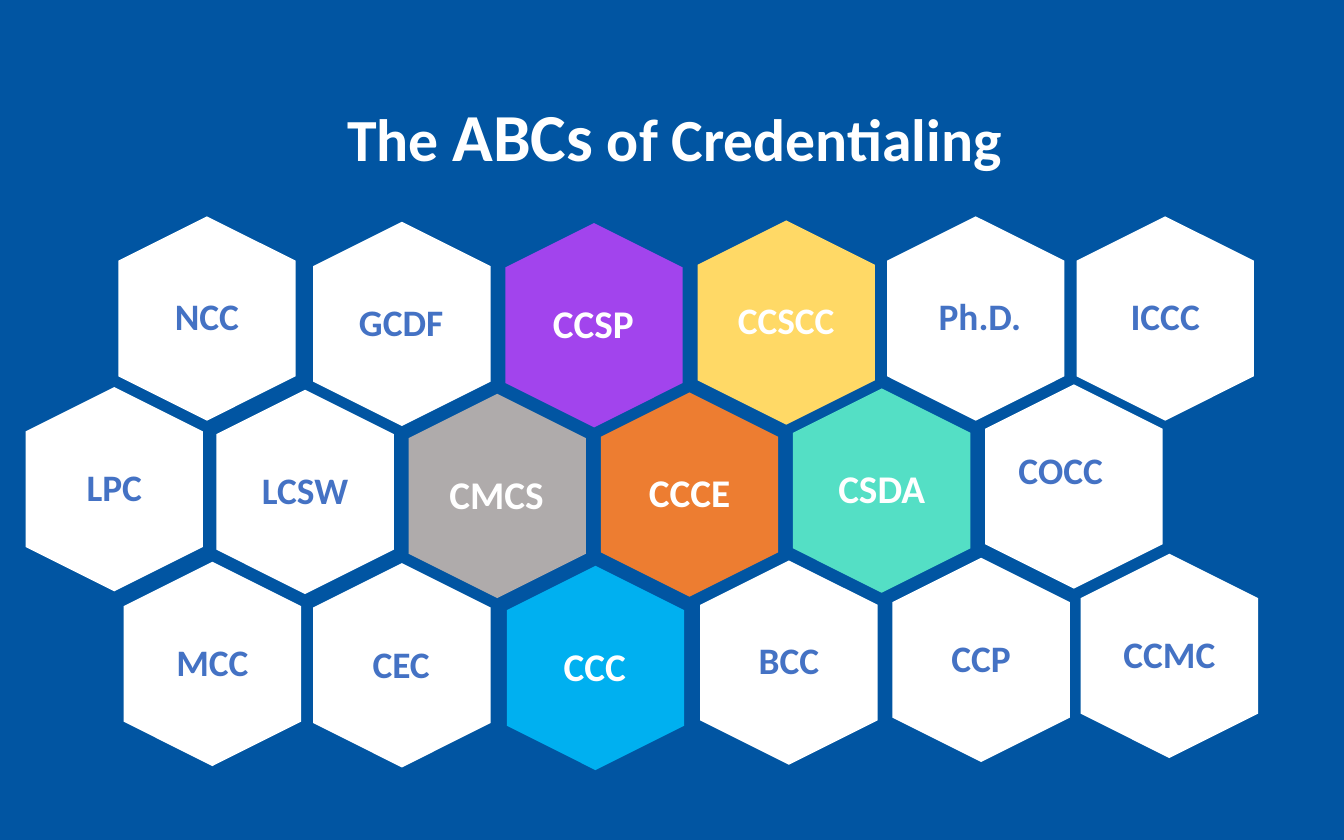
"""Build a slide with a honeycomb of counselling credentials."""
from pptx import Presentation
from pptx.dml.color import RGBColor
from pptx.enum.shapes import MSO_SHAPE
from pptx.enum.text import MSO_ANCHOR, MSO_AUTO_SIZE, PP_ALIGN
from pptx.util import Inches, Pt

HEXAGON = MSO_SHAPE.HEXAGON
TOP, MIDDLE = MSO_ANCHOR.TOP, MSO_ANCHOR.MIDDLE
LEFT, CENTER = PP_ALIGN.LEFT, PP_ALIGN.CENTER
FIXED = MSO_AUTO_SIZE.NONE

COLORS = {
    "navy": "0155A2", "white": "FFFFFF", "blue": "4472C4",
    "purple": "A244ED", "gray": "AFABAB", "sky": "00B0F0",
    "orange": "ED7D31", "teal": "54DFC5", "yellow": "FFD966",
}
WIDE, TALL, CUT = 1.32, 1.52, 0.33
SIDES = ("left", "top", "right", "bottom")

TILES = [
    ("CCSP", 3.76, 1.66, "purple", 21),
    ("GCDF", 2.33, 1.65, "white", 20),
    ("CMCS", 3.04, 2.93, "gray", 21),
    ("CCC", 3.77, 4.21, "sky", 21),
    ("CEC", 2.33, 4.19, "white", 20),
]
CELLS = [
    ("CCCE", 4.47, 2.92, "orange", 21),
    ("", 7.33, 2.86, "white", 20),
    ("CSDA", 5.9, 2.89, "teal", 21),
    ("BCC", 5.21, 4.17, "white", 20),
    ("CCSCC", 5.19, 1.64, "yellow", 20),
    ("ICCC", 8.01, 1.61, "white", 20),
    (" Ph.D.", 6.6, 1.61, "white", 20),
    ("MCC", 0.92, 4.18, "white", 20),
    ("NCC", 0.88, 1.61, "white", 20),
    ("LCSW", 1.61, 2.9, "white", 20),
    ("CCP", 6.64, 4.15, "white", 20),
    ("LPC", 0.19, 2.88, "white", 20),
    ("CCMC", 8.04, 4.12, "white", 20),
]


class Deck:
    """Hold the style and the current slide."""

    def __init__(self, font):
        self.font = font
        self.file = Presentation()
        self.file.slide_width, self.file.slide_height = Inches(10), Inches(6.25)
        self.slide = self.file.slides.add_slide(self.file.slide_layouts[5])
        self.shapes = self.slide.shapes
        self.paint(self.slide.background.fill, "navy")

    def paint(self, fill, color):
        """Fill with a named colour."""
        fill.solid()
        fill.fore_color.rgb = RGBColor.from_string(COLORS[color])

    def style(self, font, size, color):
        """Format a font in bold."""
        for key, value in {"name": self.font, "size": Pt(size), "bold": True}.items():
            setattr(font, key, value)
        font.color.rgb = RGBColor.from_string(COLORS[color])

    def frame(self, shape, anchor, wrap, pads):
        """Set the anchor, wrapping and insets of a text frame."""
        frame = shape.text_frame
        values = {"auto_size": FIXED, "vertical_anchor": anchor, "word_wrap": wrap}
        values.update({f"margin_{s}": Inches(p) for s, p in zip(SIDES, pads)})
        for key, value in values.items():
            setattr(frame, key, value)
        return frame.paragraphs[0]

    def place(self, shape, left, top, width, height):
        """Move and size a shape."""
        box = {"left": left, "top": top, "width": width, "height": height}
        for key, value in box.items():
            setattr(shape, key, Inches(value))

    def title(self, runs, *box):
        """Write the title from text and size pairs."""
        shape = self.shapes.title
        self.place(shape, *box)
        para = self.frame(shape, TOP, True, (0.1, 0.05, 0.1, 0.05))
        para.alignment = CENTER
        for text, size in runs:
            run = para.add_run()
            run.text = text
            self.style(run.font, size, "white")

    def label(self, shape, text, color, size, pads):
        """Centre a credential in a shape."""
        para = self.frame(shape, MIDDLE, True, pads)
        values = {"text": text, "alignment": CENTER, "line_spacing": 0.9,
                  "space_after": Pt(7)}
        for key, value in values.items():
            setattr(para, key, value)
        self.style(para.font, size, "blue" if color == "white" else "white")

    def finish(self, shape, color):
        """Give a shape a flat fill without outline."""
        shape.shadow.inherit = False
        self.paint(shape.fill, color)
        shape.line.fill.background()

    def tile(self, text, left, top, color, size):
        """Add an upright hexagon with a text box on it."""
        shift = (TALL - WIDE) / 2
        box = [Inches(n) for n in (left - shift, top + shift, TALL, WIDE)]
        shape = self.shapes.add_shape(HEXAGON, *box)
        shape.rotation = 90
        shape.adjustments[0] = 0.25
        shape.adjustments[1] = 1.1547
        self.finish(shape, color)
        box = [Inches(n) for n in (left + 0.2, top + 0.24, 0.91, 1.05)]
        pad = 0 if color == "white" else 0.09
        self.label(self.shapes.add_textbox(*box), text, color, size, [pad] * 4)

    def cell(self, text, left, top, color, size):
        """Draw a hexagon that carries its own text."""
        mid, right, end = left + WIDE / 2, left + WIDE, top + TALL
        dots = [(right, top + CUT), (right, end - CUT), (mid, end),
                (left, end - CUT), (left, top + CUT)]
        path = self.shapes.build_freeform(Inches(mid), Inches(top))
        path.add_line_segments([(Inches(x), Inches(y)) for x, y in dots])
        shape = path.convert_to_shape()
        self.finish(shape, color)
        if text:
            pads = (0.21, 0.24) if color == "white" else (0.29, 0.32)
            self.label(shape, text, color, size, pads * 2)

    def note(self, text, *box):
        """Add a loose text box."""
        shape = self.shapes.add_textbox(*[Inches(n) for n in box])
        para = self.frame(shape, TOP, False, (0.1, 0.05, 0.1, 0.05))
        para.text, para.alignment = text, LEFT
        self.style(para.font, 20, "blue")


def main():
    deck = Deck("Calibri")
    deck.title([("The ", 32), ("ABCs", 36), (" of Credentialing", 32)],
               1.65, 0.65, 6.74, 0.71)
    for tile in TILES:
        deck.tile(*tile)
    for cell in CELLS:
        deck.cell(*cell)
    deck.note("COCC", 7.48, 3.28, 0.84, 0.44)
    deck.file.save("out.pptx")


if __name__ == "__main__":
    main()
